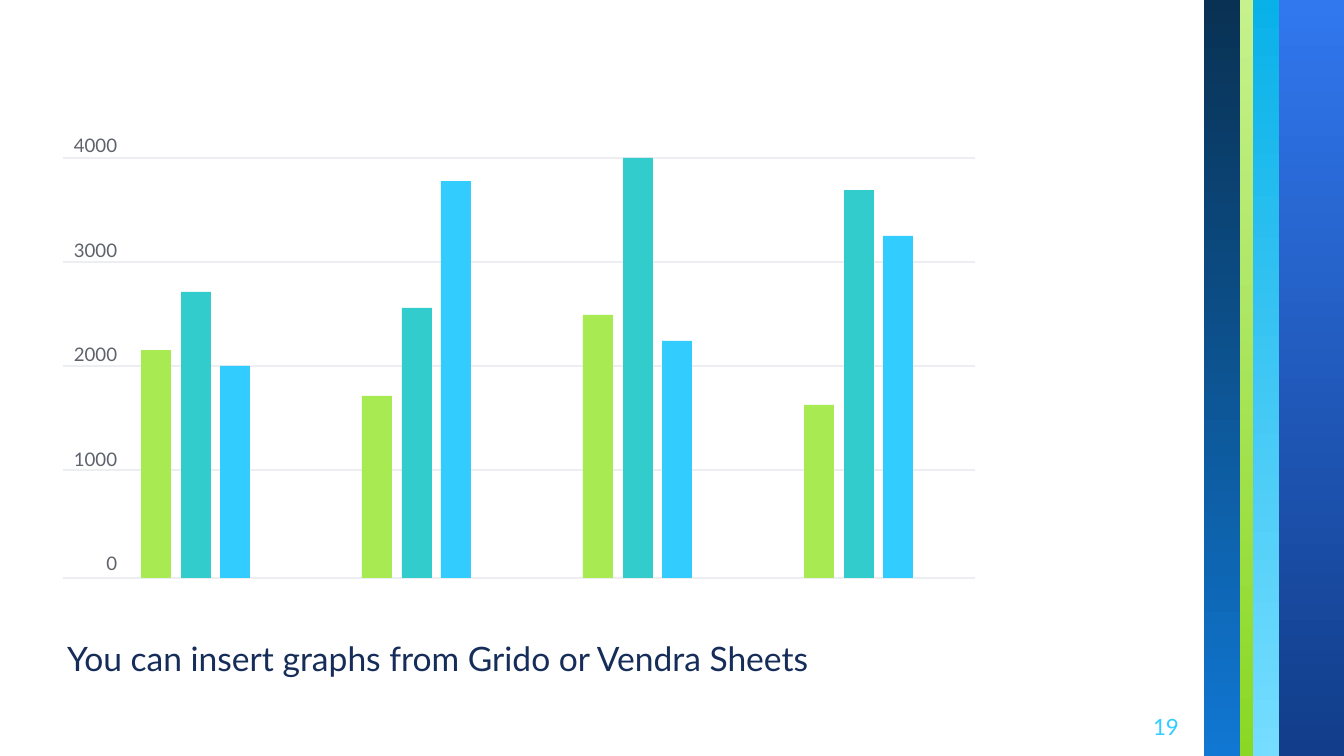
from dataclasses import dataclass

from lxml.etree import SubElement
from pptx import Presentation
from pptx.dml.color import RGBColor
from pptx.enum.shapes import MSO_CONNECTOR, MSO_SHAPE
from pptx.enum.text import MSO_ANCHOR, MSO_AUTO_SIZE, PP_ALIGN
from pptx.oxml.ns import qn
from pptx.shapes.autoshape import Shape
from pptx.slide import Slide
from pptx.text.text import TextFrame
from pptx.util import Emu, Pt

EMU_PER_PX = 914400 / 134.4
FONT = "Lato"

NAVY = RGBColor(0x16, 0x2D, 0x5A)
GRAY = RGBColor(0x5E, 0x62, 0x6B)
GRID = RGBColor(0xED, 0xEE, 0xF1)
LIME = RGBColor(0xA7, 0xEA, 0x52)
TEAL = RGBColor(0x33, 0xCC, 0xCC)
SKY = RGBColor(0x33, 0xCC, 0xFF)
BAND_BLUE_TOP = RGBColor(0x31, 0x77, 0xEE)
BAND_BLUE_BOTTOM = RGBColor(0x11, 0x3D, 0x8A)
BAND_CYAN_TOP = RGBColor(0x09, 0xB1, 0xE9)
BAND_CYAN_BOTTOM = RGBColor(0x75, 0xDD, 0xFF)
BAND_GREEN_TOP = RGBColor(0xC6, 0xF1, 0x8D)
BAND_GREEN_BOTTOM = RGBColor(0x8A, 0xD8, 0x24)
BAND_NAVY_TOP = RGBColor(0x09, 0x31, 0x53)
BAND_NAVY_BOTTOM = RGBColor(0x10, 0x77, 0xD2)

SLIDE_WIDTH, SLIDE_HEIGHT = 1344, 756
GRID_LEFT, GRID_RIGHT = 63, 975
BASELINE = 578
GRID_TOPS = (158, 262, 366, 470, BASELINE)
FIRST_BAR_LEFT, BAR_WIDTH, GROUP_PITCH = 141, 30, 221
BAR_OFFSETS = (0, 40, 79)
SERIES_COLORS = (LIME, TEAL, SKY)


@dataclass(frozen=True)
class Band:
    left: int
    width: int
    top_color: RGBColor
    bottom_color: RGBColor


BANDS = (
    Band(1279, 65, BAND_BLUE_TOP, BAND_BLUE_BOTTOM),
    Band(1253, 26, BAND_CYAN_TOP, BAND_CYAN_BOTTOM),
    Band(1240, 13, BAND_GREEN_TOP, BAND_GREEN_BOTTOM),
    Band(1204, 36, BAND_NAVY_TOP, BAND_NAVY_BOTTOM),
)

BAR_GROUPS = (
    (228, 286, 212),
    (182, 270, 397),
    (263, 420, 237),
    (173, 388, 342),
)


def px(length: int) -> Emu:
    return Emu(round(length * EMU_PER_PX))


def add_rectangle(slide: Slide, left: int, top: int, width: int, height: int) -> Shape:
    shape = slide.shapes.add_shape(
        MSO_SHAPE.RECTANGLE, px(left), px(top), px(width), px(height)
    )
    shape.shadow.inherit = False
    shape.line.fill.background()
    return shape


def add_band(slide: Slide, band: Band) -> None:
    fill = add_rectangle(slide, band.left, 0, band.width, SLIDE_HEIGHT).fill
    fill.gradient()
    fill.gradient_angle = 270
    for stop, color in zip(fill.gradient_stops, (band.top_color, band.bottom_color)):
        stop.color.rgb = color


def add_grid_line(slide: Slide, top: int) -> None:
    connector = slide.shapes.add_connector(
        MSO_CONNECTOR.STRAIGHT, px(GRID_LEFT), px(top), px(GRID_RIGHT), px(top)
    )
    connector.line.color.rgb = GRID
    connector.line.width = Pt(0.75)
    SubElement(connector._element.spPr, qn("a:effectLst"))


def add_bar_group(slide: Slide, left: int, heights: tuple[int, ...]) -> None:
    for offset, height, color in zip(BAR_OFFSETS, heights, SERIES_COLORS):
        bar = add_rectangle(slide, left + offset, BASELINE - height, BAR_WIDTH, height)
        bar.fill.solid()
        bar.fill.fore_color.rgb = color


def format_text(
    text_frame: TextFrame, size: int, color: RGBColor, alignment: PP_ALIGN, inset: int
) -> None:
    text_frame.word_wrap = True
    text_frame.auto_size = MSO_AUTO_SIZE.NONE
    text_frame.margin_left = text_frame.margin_right = px(inset)
    text_frame.margin_top = text_frame.margin_bottom = px(inset)
    for paragraph in text_frame.paragraphs:
        paragraph.alignment = alignment
        for run in paragraph.runs:
            run.font.name = FONT
            run.font.size = Pt(size)
            run.font.color.rgb = color


def add_caption(slide: Slide) -> None:
    body = slide.placeholders[1]
    body.left, body.top, body.width, body.height = px(54), px(625), px(1064), px(77)
    text_frame = body.text_frame
    text_frame.text = "You can insert graphs from Grido or Vendra Sheets"
    format_text(text_frame, 18, NAVY, PP_ALIGN.LEFT, 13)
    paragraph = text_frame.paragraphs[0]
    paragraph.space_before = Pt(3.6)
    properties = paragraph._p.get_or_add_pPr()
    properties.set("marL", "0")
    properties.set("indent", "0")
    SubElement(properties, qn("a:buNone"))


def add_page_number(slide: Slide) -> None:
    text_box = slide.shapes.add_textbox(px(1111), px(698), px(81), px(58))
    text_frame = text_box.text_frame
    text_frame.text = "19"
    text_frame.vertical_anchor = MSO_ANCHOR.MIDDLE
    format_text(text_frame, 12, SKY, PP_ALIGN.RIGHT, 13)


def add_axis_labels(slide: Slide) -> None:
    text_box = slide.shapes.add_textbox(px(GRID_LEFT), px(134), px(54), px(445))
    text_frame = text_box.text_frame
    text_frame.text = "\n".join(str(value) for value in range(4000, -1, -1000))
    format_text(text_frame, 10, GRAY, PP_ALIGN.RIGHT, 0)
    for paragraph in text_frame.paragraphs[1:]:
        paragraph.space_before = Pt(44)


def main() -> None:
    presentation = Presentation()
    presentation.slide_width = px(SLIDE_WIDTH)
    presentation.slide_height = px(SLIDE_HEIGHT)
    slide = presentation.slides.add_slide(presentation.slide_layouts[1])
    title = slide.shapes.title._element
    title.getparent().remove(title)

    for band in BANDS:
        add_band(slide, band)
    add_caption(slide)
    add_page_number(slide)
    for top in GRID_TOPS:
        add_grid_line(slide, top)
    add_axis_labels(slide)
    for index, heights in enumerate(BAR_GROUPS):
        add_bar_group(slide, FIRST_BAR_LEFT + index * GROUP_PITCH, heights)
    presentation.save("out.pptx")


if __name__ == "__main__":
    main()
